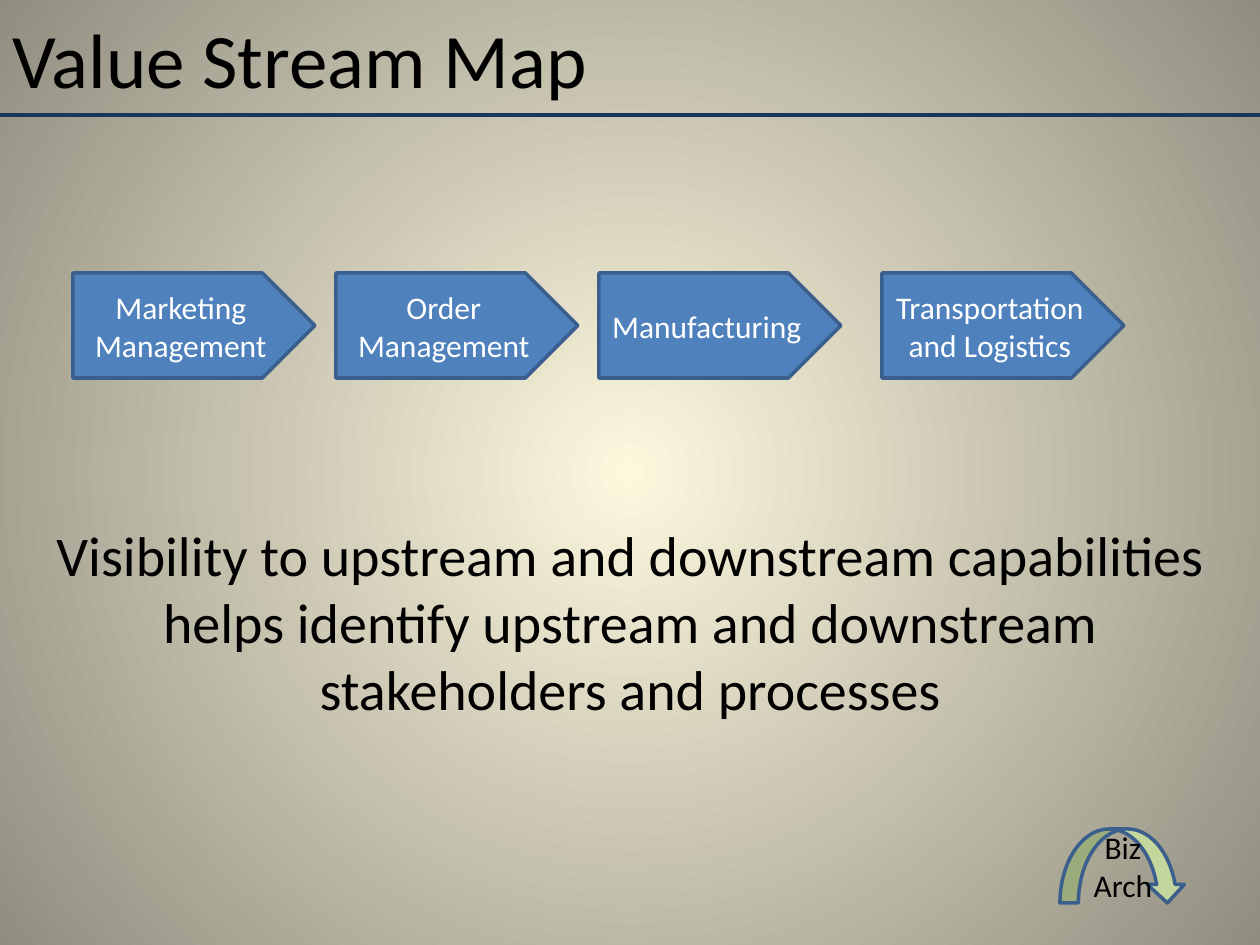
from lxml import etree
from pptx import Presentation
from pptx.dml.color import RGBColor
from pptx.enum.shapes import MSO_CONNECTOR, MSO_SHAPE
from pptx.enum.text import MSO_ANCHOR, PP_ALIGN
from pptx.oxml.ns import qn
from pptx.util import Emu, Pt

STRAIGHT = MSO_CONNECTOR.STRAIGHT
PENTAGON, CURVED_ARROW = MSO_SHAPE.PENTAGON, MSO_SHAPE.CURVED_DOWN_ARROW
TOP, MIDDLE = MSO_ANCHOR.TOP, MSO_ANCHOR.MIDDLE
LEFT, CENTER = PP_ALIGN.LEFT, PP_ALIGN.CENTER

EMU_PER_PX = 914400 / 126
SLIDE_W, SLIDE_H = 1260, 945
THEME = {
    "font": "Calibri",
    "glow": "FCF7DD", "edge": "918E81",
    "text": "000000", "stage_text": "FFFFFF",
    "rule": "17375E", "stage": "4F81BD", "outline": "3A5F8C", "badge": "C3D69B",
    "title_size": 44, "message_size": 32, "label_size": 18,
}


def px(*lengths):
    return [Emu(round(length * EMU_PER_PX)) for length in lengths]


def write(shape, text, size, color, align=CENTER, anchor=MIDDLE):
    frame = shape.text_frame
    frame.word_wrap = True
    frame.vertical_anchor = anchor
    paragraph = frame.paragraphs[0]
    paragraph.text = text
    paragraph.alignment = align
    paragraph.font.name = THEME["font"]
    paragraph.font.size = Pt(THEME[size])
    paragraph.font.color.rgb = RGBColor.from_string(THEME[color])


prs = Presentation()
prs.slide_width, prs.slide_height = px(SLIDE_W, SLIDE_H)
slide = prs.slides.add_slide(prs.slide_layouts[6])
shapes = slide.shapes

# Background: circular glow from the centre
background = slide.background.fill
background.gradient()
for stop, color in zip(background.gradient_stops, ("glow", "edge")):
    stop.color.rgb = RGBColor.from_string(THEME[color])
gradient = slide.element.find(".//" + qn("a:gradFill"))
gradient.remove(gradient.find(qn("a:lin")))
glow_path = etree.SubElement(gradient, qn("a:path"), path="circle")
etree.SubElement(glow_path, qn("a:fillToRect"), l="50000", t="50000", r="50000", b="50000")

# Title and rule
TITLE_H = 115
title = shapes.add_textbox(*px(0, 0, SLIDE_W, TITLE_H))
write(title, "Value Stream Map", "title_size", "text", align=LEFT)
rule = shapes.add_connector(STRAIGHT, *px(0, TITLE_H, SLIDE_W, TITLE_H))
rule.line.color.rgb = RGBColor.from_string(THEME["rule"])
rule.line.width = Pt(2.25)
etree.SubElement(rule._element.spPr, qn("a:effectLst"))

# Message
message = shapes.add_textbox(*px(32, 514, 1197, 262))
write(message, "Visibility to upstream and downstream capabilities helps identify "
      "upstream and downstream stakeholders and processes",
      "message_size", "text", anchor=TOP)

# Value stream stages and the badge
STAGE_TOP, STAGE_W, STAGE_H = 273, 242, 105
stages = [
    (73, "Marketing Management"),
    (336, "Order Management"),
    (599, "Manufacturing"),
    (882, "Transportation and Logistics"),
]
outlined = [
    (PENTAGON, (left, STAGE_TOP, STAGE_W, STAGE_H), label, "stage", "stage_text")
    for left, label in stages
]
outlined.append((CURVED_ARROW, (1060, 829, 126, 74), "Biz Arch", "badge", "text"))
for preset, box, label, fill, text_color in outlined:
    shape = shapes.add_shape(preset, *px(*box))
    shape.shadow.inherit = False
    shape.fill.solid()
    shape.fill.fore_color.rgb = RGBColor.from_string(THEME[fill])
    shape.line.color.rgb = RGBColor.from_string(THEME["outline"])
    shape.line.width = Pt(2)
    write(shape, label, "label_size", text_color)

prs.save("out.pptx")
